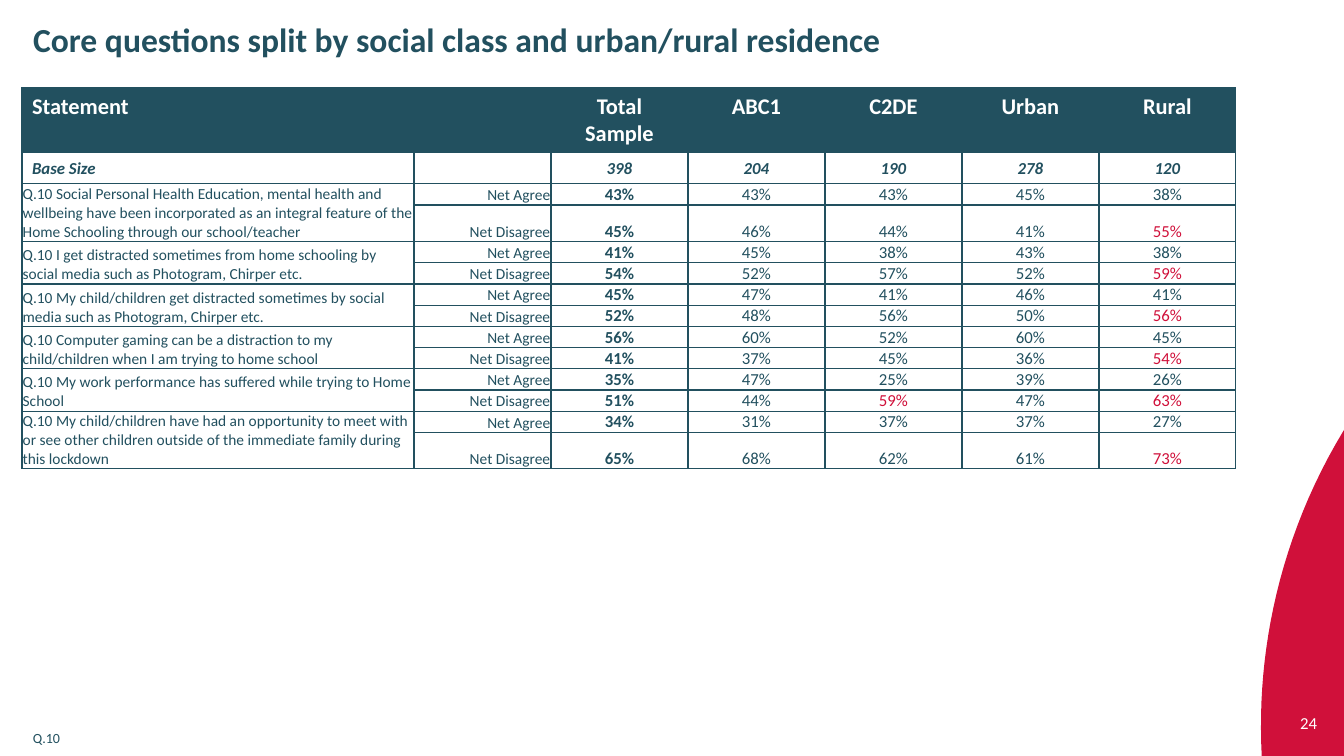
"""Build the slide on core questions split by social class and residence."""
import math

from lxml import etree
from pptx import Presentation
from pptx import util as u
from pptx.dml.color import RGBColor
from pptx.enum import text
from pptx.oxml.ns import qn

TITLE = "Core questions split by social class and urban/rural residence"
HEADER = ["Statement", "", "Total Sample", "ABC1", "C2DE", "Urban", "Rural"]
BASE = ["Base Size", "", "398", "204", "190", "278", "120"]
ANSWERS = ["Net Agree", "Net Disagree"]
QUESTIONS = [
    ("Q.10 Social Personal Health Education, mental health and wellbeing have been "
     "incorporated as an integral feature of the Home Schooling through our school/teacher",
     (43, 43, 43, 45, 38), (45, 46, 44, 41, 55)),
    ("Q.10 I get distracted sometimes from home schooling by social media such as "
     "Photogram, Chirper etc.",
     (41, 45, 38, 43, 38), (54, 52, 57, 52, 59)),
    ("Q.10 My child/children get distracted sometimes by social media such as "
     "Photogram, Chirper etc.",
     (45, 47, 41, 46, 41), (52, 48, 56, 50, 56)),
    ("Q.10 Computer gaming can be a distraction to my child/children when I am trying "
     "to home school",
     (56, 60, 52, 60, 45), (41, 37, 45, 36, 54)),
    ("Q.10 My work performance has suffered while trying to Home School",
     (35, 47, 25, 39, 26), (51, 44, 59, 47, 63)),
    ("Q.10 My child/children have had an opportunity to meet with or see other children "
     "outside of the immediate family during this lockdown",
     (34, 31, 37, 37, 27), (65, 68, 62, 61, 73)),
]
HIGHLIGHTS = {(row, 6) for row in range(3, 14, 2)} | {(11, 4)}

TEAL = RGBColor(0x22, 0x50, 0x5F)
RED = RGBColor(0xD0, 0x10, 0x3A)
WHITE = RGBColor(0xFF, 0xFF, 0xFF)
FONT = "Calibri"
PX = 914400 / 100.8
WIDTH, HEIGHT = 1344, 756
TABLE_LEFT, TABLE_TOP = 22, 88
COLUMNS = [392] + [137] * 6
ROWS = [64, 31, 21, 36] + [21] * 9 + [36]
CELL_MARGIN = u.Pt(0.5)
ARC_RADIUS, ARC_X, ARC_Y, ARC_TOP, ARC_STEPS = 569, 1830, 726, 430, 24
LEFT, CENTER, RIGHT = text.PP_ALIGN.LEFT, text.PP_ALIGN.CENTER, text.PP_ALIGN.RIGHT
TOP, MIDDLE, BOTTOM = text.MSO_ANCHOR.TOP, text.MSO_ANCHOR.MIDDLE, text.MSO_ANCHOR.BOTTOM


def px(value):
    return u.Emu(round(value * PX))


def write(p, words, size, color, align=LEFT, bold=False, italic=False):
    p.alignment = align
    if not words:
        p._p.get_or_add_endParaRPr().set("sz", str(size * 100))
        return
    p.text = words
    for r in p.runs:
        r.font.name, r.font.size = FONT, u.Pt(size)
        r.font.bold, r.font.italic = bold, italic
        r.font.color.rgb = color


def place(sp, box, words, size, color, align=LEFT, anchor=TOP, bold=False):
    sp.left, sp.top, sp.width, sp.height = map(px, box)
    tf = sp.text_frame
    tf.word_wrap, tf.auto_size = True, text.MSO_AUTO_SIZE.NONE
    tf.vertical_anchor = anchor
    p = tf.paragraphs[0]
    write(p, words, size, color, align, bold)
    p.line_spacing, p.space_before, p.space_after = 0.9, u.Pt(0), u.Pt(6)


def add_arc(s):
    step = (HEIGHT - ARC_TOP) / ARC_STEPS
    points = [(WIDTH, ARC_TOP)]
    for i in range(1, ARC_STEPS + 1):
        y = ARC_TOP + i * step
        points.append((ARC_X - math.sqrt(ARC_RADIUS ** 2 - (y - ARC_Y) ** 2), y))
    builder = s.shapes.build_freeform(px(WIDTH), px(HEIGHT))
    builder.add_line_segments([(px(x), px(y)) for x, y in points])
    sp = builder.convert_to_shape()
    sp.shadow.inherit = False
    sp.fill.solid()
    sp.fill.fore_color.rgb = RED
    sp.line.fill.background()


def add_borders(cell):
    props = cell._tc.get_or_add_tcPr()
    for side in ("lnL", "lnR", "lnT", "lnB"):
        line = etree.SubElement(props, qn(f"a:{side}"), w=str(u.Pt(1)))
        fill = etree.SubElement(line, qn("a:solidFill"))
        etree.SubElement(fill, qn("a:srgbClr"), val=str(TEAL))


def table_rows():
    rows = [HEADER, BASE]
    for statement, *results in QUESTIONS:
        for label, answer, values in zip((statement, ""), ANSWERS, results):
            rows.append([label, answer] + [f"{v}%" for v in values])
    return rows


def cell_style(row, col):
    align = CENTER if col > 1 else LEFT
    if row == 0:
        return TOP, (16, WHITE, align, True)
    if row == 1:
        return MIDDLE, (12, TEAL, align, True, True)
    if col < 2:
        return BOTTOM, (11, TEAL, RIGHT if col else LEFT)
    return BOTTOM, (12, RED if (row, col) in HIGHLIGHTS else TEAL, CENTER, col == 2)


def add_results(s):
    frame = s.shapes.add_table(len(ROWS), len(COLUMNS), px(TABLE_LEFT), px(TABLE_TOP),
                               px(sum(COLUMNS)), px(sum(ROWS)))
    table = frame.table
    for column, width in zip(table.columns, COLUMNS):
        column.width = px(width)
    for row, height in zip(table.rows, ROWS):
        row.height = px(height)
    for i, row in enumerate(table_rows()):
        for j, words in enumerate(row):
            cell = table.cell(i, j)
            add_borders(cell)
            cell.fill.solid()
            cell.fill.fore_color.rgb = WHITE if i else TEAL
            cell.vertical_anchor, style = cell_style(i, j)
            if i > 1:
                cell.margin_left = cell.margin_right = cell.margin_top = CELL_MARGIN
                cell.margin_bottom = 0
            write(cell.text_frame.paragraphs[0], words, *style)
    for i in range(2, len(ROWS), 2):
        table.cell(i, 0).merge(table.cell(i + 1, 0))


def main():
    prs = Presentation()
    prs.slide_width, prs.slide_height = px(WIDTH), px(HEIGHT)
    s = prs.slides.add_slide(prs.slide_layouts[5])
    add_arc(s)
    place(s.shapes.title, (23, 18, 872, 87), TITLE, 24, TEAL, bold=True)
    place(s.shapes.add_textbox(0, 0, 0, 0), (23, 712, 541, 40), "Q.10", 10, TEAL,
          anchor=BOTTOM)
    place(s.shapes.add_textbox(0, 0, 0, 0), (1263, 704, 64, 40), "24", 12, WHITE,
          RIGHT, MIDDLE)
    add_results(s)
    prs.save("out.pptx")


if __name__ == "__main__":
    main()
